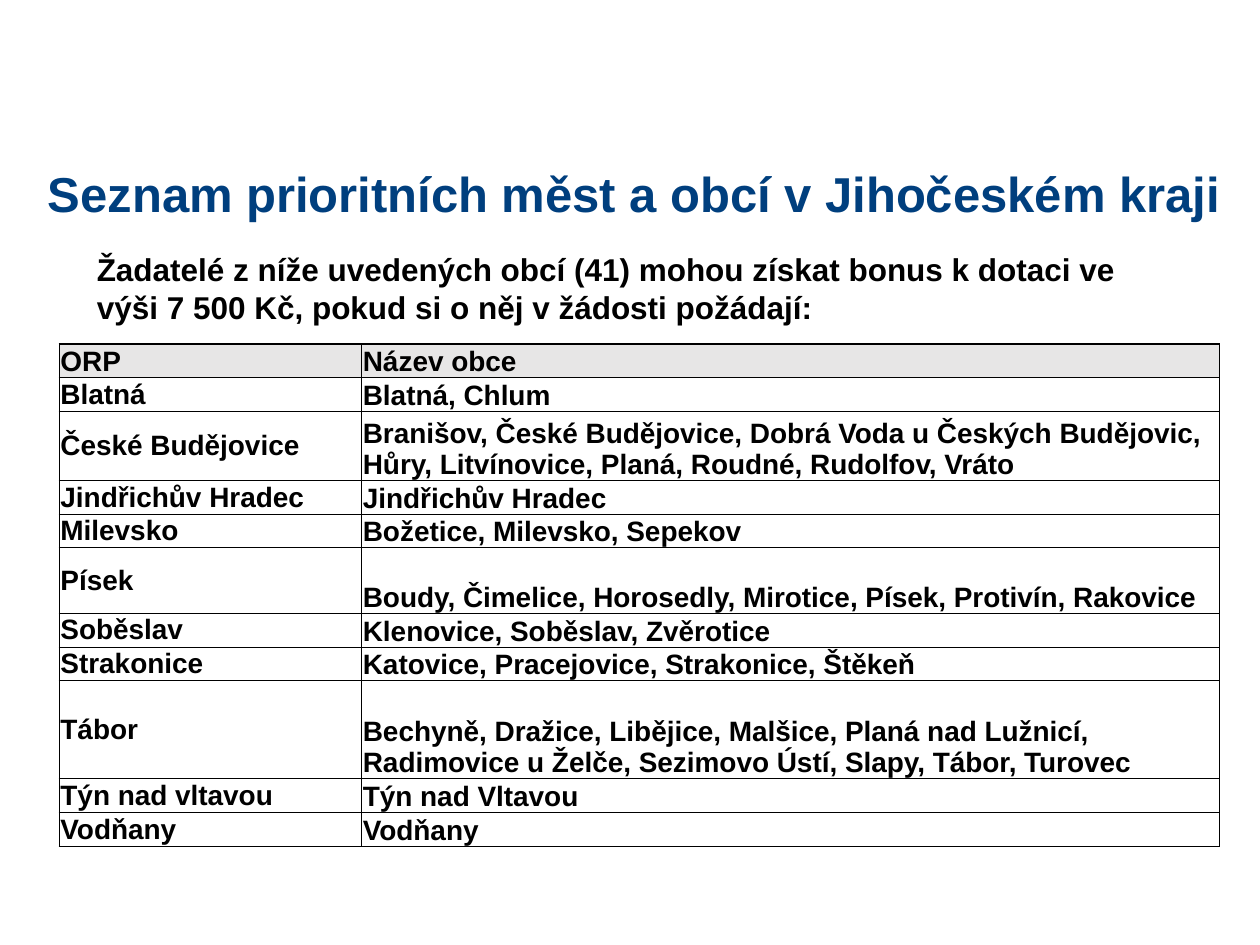
from lxml import etree
from pptx import Presentation
from pptx.dml.color import RGBColor
from pptx.enum.text import MSO_ANCHOR, PP_ALIGN
from pptx.oxml.ns import qn
from pptx.util import Inches, Pt

TOP, MIDDLE, BOTTOM = MSO_ANCHOR.TOP, MSO_ANCHOR.MIDDLE, MSO_ANCHOR.BOTTOM
LEFT = PP_ALIGN.LEFT
TITLE_ONLY = 5

NAVY = RGBColor(0x00, 0x3F, 0x7E)
BLACK = RGBColor(0x00, 0x00, 0x00)
GRAY = RGBColor(0xE7, 0xE6, 0xE6)

OUTER_LINE, INNER_LINE = 0.75, 0.5
COLUMN_WIDTHS = [2.4, 6.81]

# District, its municipalities, row height in inches
ROWS = [
    ("ORP", "Název obce", 0.26),
    ("Blatná", "Blatná, Chlum", 0.26),
    ("České Budějovice",
     "Branišov, České Budějovice, Dobrá Voda u Českých Budějovic, "
     "Hůry, Litvínovice, Planá, Roudné, Rudolfov, Vráto", 0.55),
    ("Jindřichův Hradec", "Jindřichův Hradec", 0.26),
    ("Milevsko", "Božetice, Milevsko, Sepekov", 0.26),
    ("Písek",
     "Boudy, Čimelice, Horosedly, Mirotice, Písek, Protivín, Rakovice", 0.52),
    ("Soběslav", "Klenovice, Soběslav, Zvěrotice", 0.26),
    ("Strakonice", "Katovice, Pracejovice, Strakonice, Štěkeň", 0.26),
    ("Tábor",
     "Bechyně, Dražice, Libějice, Malšice, Planá nad Lužnicí, "
     "Radimovice u Želče, Sezimovo Ústí, Slapy, Tábor, Turovec", 0.78),
    ("Týn nad vltavou", "Týn nad Vltavou", 0.26),
    ("Vodňany", "Vodňany", 0.27),
]


def write_text(frame, text, *, size, color=BLACK, font="Arial", bold=True):
    para = frame.paragraphs[0]
    para.alignment = LEFT
    span = para.add_run()
    span.text = text
    span.font.name = font
    span.font.size = Pt(size)
    span.font.bold = bold
    span.font.color.rgb = color


def add_border(cell, side, width):
    line = etree.SubElement(cell._tc.get_or_add_tcPr(), qn(f"a:ln{side}"),
                            w=str(Pt(width)))
    fill = etree.SubElement(line, qn("a:solidFill"))
    etree.SubElement(fill, qn("a:srgbClr"), val=str(BLACK))


class SlideBuilder:
    """Holds the current slide and its text sizes."""

    title_size, intro_size, table_size = 28, 18, 16

    def __init__(self, slide):
        self.slide = slide

    def title(self, text, left, top, width, height):
        box = self.slide.shapes.title
        box.left, box.top = Inches(left), Inches(top)
        box.width, box.height = Inches(width), Inches(height)
        box.text_frame.vertical_anchor = TOP
        write_text(box.text_frame, text, size=self.title_size, color=NAVY)

    def intro(self, text, left, top, width, height):
        box = self.slide.shapes.add_textbox(
            Inches(left), Inches(top), Inches(width), Inches(height))
        box.text_frame.word_wrap = True
        box.text_frame.vertical_anchor = MIDDLE
        write_text(box.text_frame, text, size=self.intro_size)

    def table(self, rows, left, top):
        heights = [row[-1] for row in rows]
        table = self.slide.shapes.add_table(
            len(rows), len(COLUMN_WIDTHS), Inches(left), Inches(top),
            Inches(sum(COLUMN_WIDTHS)), Inches(sum(heights))).table
        table.first_row = table.horz_banding = False
        for column, width in zip(table.columns, COLUMN_WIDTHS):
            column.width = Inches(width)
        last_row, last_col = len(rows) - 1, len(COLUMN_WIDTHS) - 1
        for r, (*texts, height) in enumerate(rows):
            table.rows[r].height = Inches(height)
            for c, text in enumerate(texts):
                edges = {"L": c == 0, "R": c == last_col,
                         "T": r == 0, "B": r == last_row}
                anchor = MIDDLE if c == 0 and r > 0 else BOTTOM
                self.cell(table.cell(r, c), text, anchor, edges, r == 0)

    def cell(self, cell, text, anchor, edges, header):
        cell.margin_left = cell.margin_right = Inches(0.01)
        cell.margin_top = cell.margin_bottom = 0
        cell.vertical_anchor = anchor
        for side, outer in edges.items():
            add_border(cell, side, OUTER_LINE if outer else INNER_LINE)
        if header:
            cell.fill.solid()
            cell.fill.fore_color.rgb = GRAY
        else:
            cell.fill.background()
        write_text(cell.text_frame, text, size=self.table_size)


def main():
    deck = Presentation()
    deck.slide_width, deck.slide_height = Inches(10), Inches(7.5)
    page = SlideBuilder(deck.slides.add_slide(deck.slide_layouts[TITLE_ONLY]))

    # Heading and introduction
    page.title("Seznam prioritních měst a obcí v Jihočeském kraji",
               0.28, 1.25, 9.61, 1.25)
    page.intro("Žadatelé z níže uvedených obcí (41) mohou získat bonus k dotaci "
               "ve výši 7 500 Kč, pokud si o něj v žádosti požádají:",
               0.67, 1.85, 8.57, 0.87)

    # Municipalities by district
    page.table(ROWS, 0.47, 2.73)

    deck.save("out.pptx")


if __name__ == "__main__":
    main()
